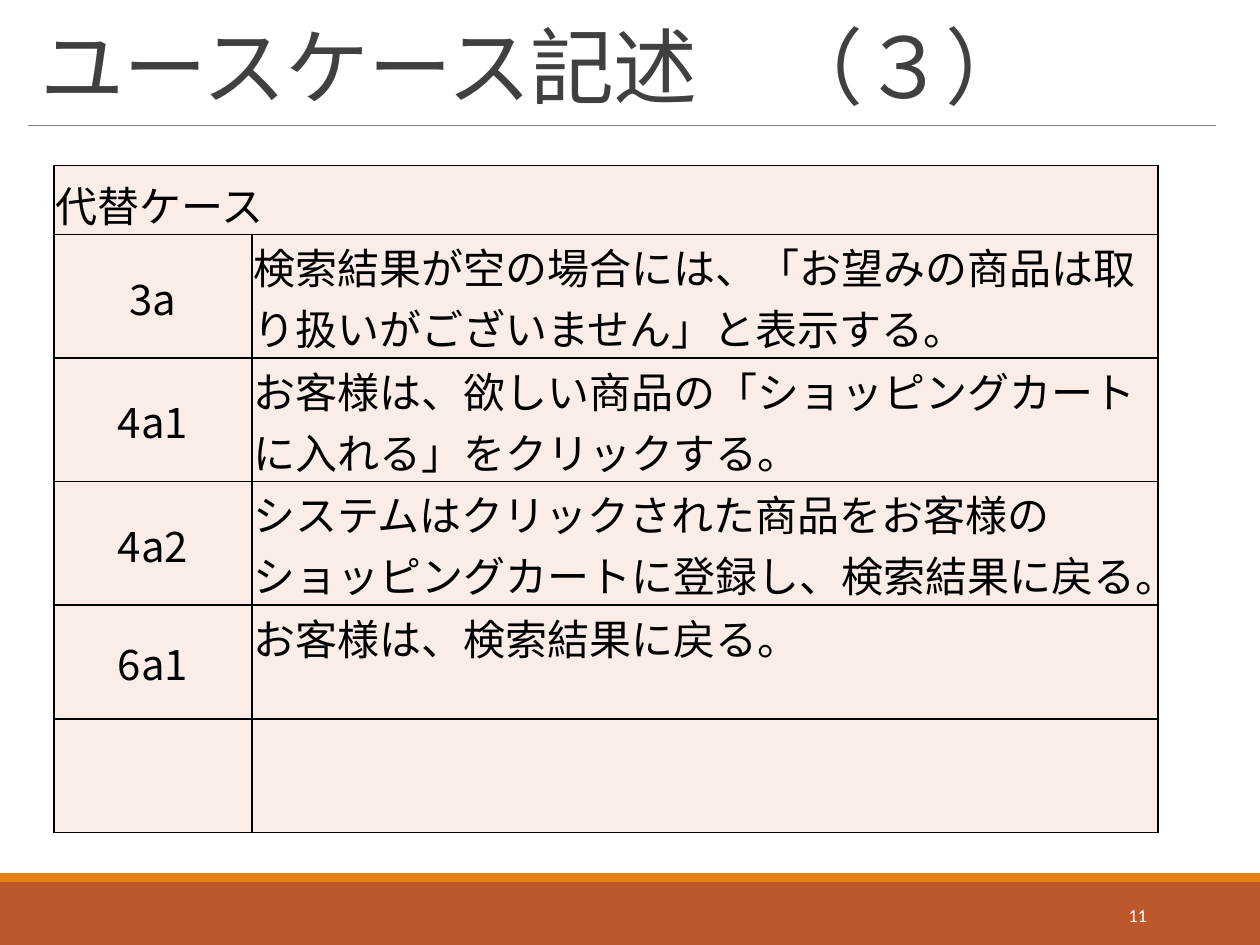
from lxml import etree
from pptx import Presentation
from pptx.dml.color import RGBColor
from pptx.enum.shapes import MSO_CONNECTOR, MSO_SHAPE
from pptx.enum.text import MSO_ANCHOR, PP_ALIGN
from pptx.oxml.ns import qn
from pptx.util import Inches, Pt

LEFT, MID, RIGHT = PP_ALIGN.LEFT, PP_ALIGN.CENTER, PP_ALIGN.RIGHT
TOP, CENTER, BASE = MSO_ANCHOR.TOP, MSO_ANCHOR.MIDDLE, MSO_ANCHOR.BOTTOM
RECT, LINE = MSO_SHAPE.RECTANGLE, MSO_CONNECTOR.STRAIGHT

WIDE, HIGH = 10, 7.5
LATIN, ASIAN = "Calibri", "Noto Sans CJK JP"
HUES = {"rust": "BD582C", "amber": "E48312", "rule": "808080", "title": "404040",
        "white": "FFFFFF", "black": "000000", "cell": "FAEDE7"}
HEAD = "代替ケース"
STEPS = [
    ("3a", "検索結果が空の場合には、「お望みの商品は取り扱いがございません」と表示する。"),
    ("4a1", "お客様は、欲しい商品の「ショッピングカートに入れる」をクリックする。"),
    ("4a2", "システムはクリックされた商品をお客様のショッピングカートに登録し、検索結果に戻る。"),
    ("6a1", "お客様は、検索結果に戻る。"),
    ("", ""),
]
FIT = 21  # characters in one line of a step


def hue(name):
    return RGBColor.from_string(HUES[name])


def inches(box):
    return [Inches(v) for v in box]


def write(frame, text, size=24, font=ASIAN, color="black", align=LEFT,
          lead=None, track=None):
    para = frame.paragraphs[0]
    para.alignment = align
    if lead:
        para.line_spacing = lead
    run = para.add_run()
    run.text = text
    run.font.size = Pt(size)
    run.font.name = font
    run.font.color.rgb = hue(color)
    props = run.font._element
    etree.SubElement(props, qn("a:ea"), typeface=ASIAN)
    if track:
        props.set("spc", str(round(track * 100)))


def label(slide, box, text, anchor, **form):
    frame = slide.shapes.add_textbox(*inches(box)).text_frame
    frame.word_wrap = True
    frame.vertical_anchor = anchor
    write(frame, text, font=LATIN, **form)


def band(slide, box, color):
    shape = slide.shapes.add_shape(RECT, *inches(box))
    shape.shadow.inherit = False
    shape.fill.solid()
    shape.fill.fore_color.rgb = hue(color)
    shape.line.fill.background()


def header(slide, box):
    x, y, w, h = box
    # Rule below the title
    rule = slide.shapes.add_connector(LINE, *inches((x, y + h, x + w, y + h)))
    rule.line.color.rgb = hue("rule")
    rule.line.width = Pt(0.5)
    etree.SubElement(rule._element.spPr, qn("a:effectLst"))
    # Title
    label(slide, (x, y, w, h - 0.03), "ユースケース記述　（３）", BASE,
          size=48, color="title", lead=0.85, track=-0.5)


def footer(slide, box):
    x, y, w, h = box
    edge = 0.07
    band(slide, (x, y + edge, w, h - edge), "rust")
    band(slide, (x, y, w, edge), "amber")
    # Page number
    label(slide, (x + 0.812 * w, y + 0.13, 0.108 * w, 0.4), "11", CENTER,
          size=10.5, color="white", align=RIGHT)


def style(cell):
    cell.margin_left = cell.margin_right = cell.margin_top = Inches(0.01)
    cell.margin_bottom = 0
    props = cell._tc.get_or_add_tcPr()
    for side in ("lnL", "lnR", "lnT", "lnB"):
        line = etree.SubElement(props, qn("a:" + side), w=str(Pt(1)))
        fill = etree.SubElement(line, qn("a:solidFill"))
        etree.SubElement(fill, qn("a:srgbClr"), val=HUES["black"])
    cell.fill.solid()
    cell.fill.fore_color.rgb = hue("cell")


def put(cell, text, anchor=TOP, **form):
    cell.vertical_anchor = anchor
    write(cell.text_frame, text, **form)


def cases(slide, box):
    x, y, w, h = box
    first, top, tall = 1.57, 0.55, 0.98
    # Two-line steps are tall; the other rows share what is left
    long = [len(text) > FIT for _, text in STEPS]
    low = (h - top - tall * sum(long)) / long.count(False)
    rows = [top] + [tall if two else low for two in long]
    grid = slide.shapes.add_table(len(rows), 2, *inches(box)).table
    for col, size in zip(grid.columns, (first, w - first)):
        col.width = Inches(size)
    for row, size in zip(grid.rows, rows):
        row.height = Inches(size)
    for cell in grid.iter_cells():
        style(cell)
    # Heading across both columns
    grid.cell(0, 0).merge(grid.cell(0, 1))
    put(grid.cell(0, 0), HEAD, BASE)
    # Steps
    for r, (code, text) in enumerate(STEPS, 1):
        if code:
            put(grid.cell(r, 0), code, CENTER, align=MID)
            put(grid.cell(r, 1), text)


def main():
    deck = Presentation()
    deck.slide_width, deck.slide_height = Inches(WIDE), Inches(HIGH)
    slide = deck.slides.add_slide(deck.slide_layouts[6])
    footer(slide, (0, 0.924 * HIGH, WIDE, 0.076 * HIGH))
    header(slide, (0.022 * WIDE, 0.012 * HIGH, 0.943 * WIDE, 0.121 * HIGH))
    cases(slide, (0.043 * WIDE, 0.175 * HIGH, 0.876 * WIDE, 0.706 * HIGH))
    deck.save("out.pptx")


if __name__ == "__main__":
    main()
